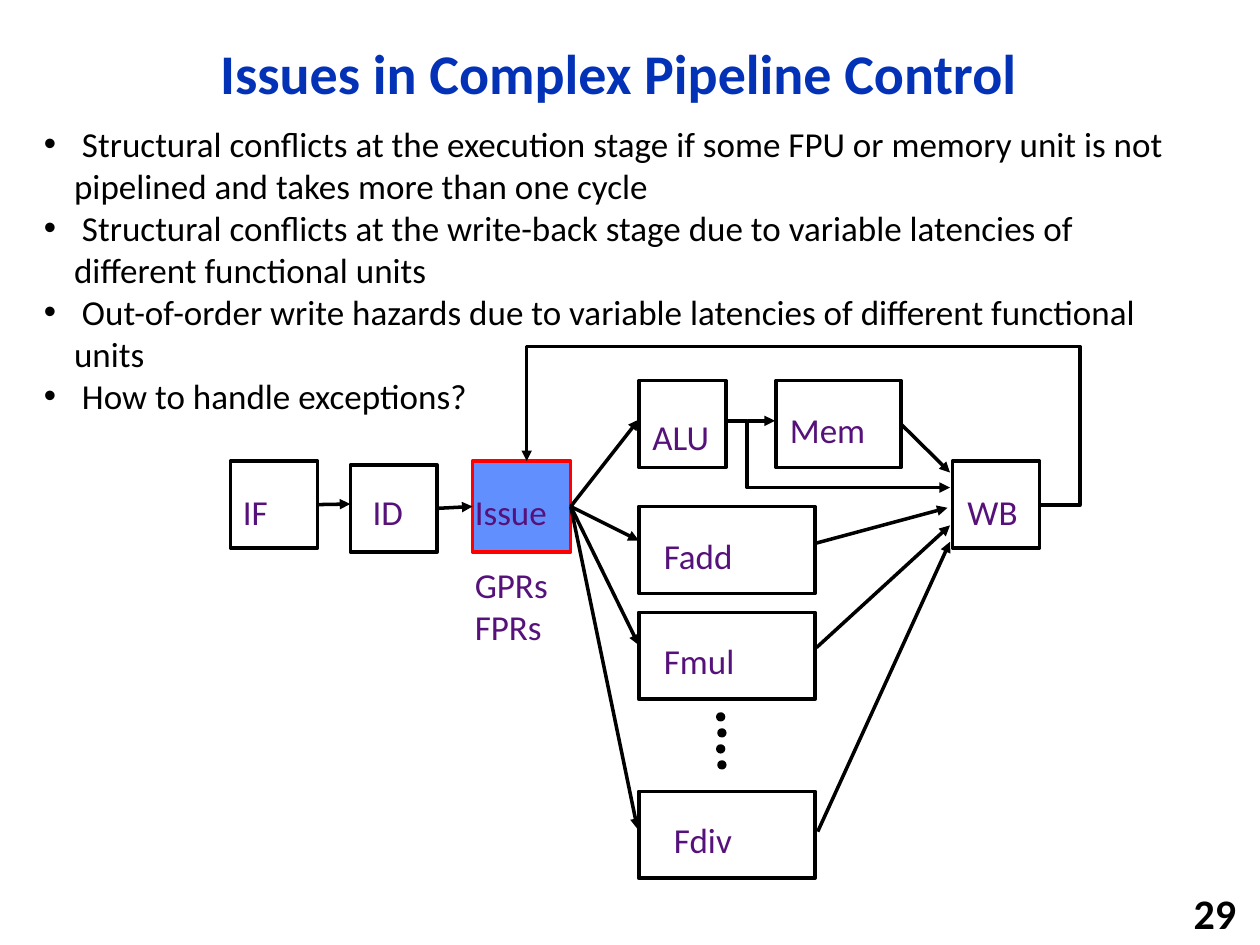
from lxml.etree import SubElement
from pptx import Presentation
from pptx.dml.color import RGBColor
from pptx.enum.shapes import MSO_CONNECTOR as Connector, MSO_SHAPE as Shape
from pptx.enum.text import MSO_ANCHOR as Anchor, PP_ALIGN as Align
from pptx.oxml.ns import qn
from pptx.util import Inches, Pt

COLORS = {"title": "0332B7", "ink": "000000", "label": "56127A",
          "issue": "618FFD", "alert": "FF0000"}
LEFT, RIGHT = 1, 3
BULLETS = [
    " Structural conflicts at the execution stage if some FPU or memory unit is not "
    "pipelined and takes more than one cycle",
    " Structural conflicts at the write-back stage due to variable latencies of "
    "different functional units",
    " Out-of-order write hazards due to variable latencies of different functional units",
    " How to handle exceptions?",
]
STAGES = {
    "IF": (0, 0.91, 0.69, 0, 0.18),
    "ID": (0.95, 0.94, 0.69, 0.08, 0.15),
    "Issue": (1.92, 0.91, 0.78, -0.08, 0.18),
    "WB": (5.73, 0.91, 0.69, 0.02, 0.18),
    "ALU": (3.24, 0.27, 0.69, 0.01, 0.23),
    "Mem": (4.33, 0.27, 0.99, 0.01, 0.17),
    "Fadd": (3.24, 1.27, 1.4, 0.1, 0.17),
    "Fmul": (3.24, 2.11, 1.4, 0.1, 0.17),
    "Fdiv": (3.24, 3.53, 1.4, 0.18, 0.17),
}
ARROWS = [
    ("IF", (0.7, 1.25), None, (0.95, 1.25)),
    ("ID", (1.66, 1.28), "Issue", (1.92, 1.28)),
    ("Issue", (2.7, 1.25), None, (3.24, 0.58)),
    ("Issue", (2.7, 1.25), None, (3.24, 1.54)),
    ("Issue", (2.7, 1.25), None, (3.24, 2.37)),
    ("Issue", (2.7, 1.25), None, (3.23, 3.83)),
    ("Mem", (5.33, 0.59), None, (5.71, 1.0)),
    (None, (4.65, 1.56), None, (5.69, 1.28)),
    (None, (4.65, 2.39), None, (5.71, 1.42)),
    (None, (4.66, 3.85), None, (5.71, 1.55)),
    (None, (4.11, 0.59), None, (4.32, 0.59)),
]
ROUTES = [
    [(3.94, 0.59), (4.1, 0.59), (4.1, 1.12), (5.71, 1.12)],
    [(6.43, 1.26), (6.74, 1.26), (6.74, 0), (2.35, 0), (2.35, 0.91)],
]


def color(name):
    """Return the named colour."""
    return RGBColor.from_string(COLORS[name])


def add_text(slide, box, lines, size, tint, bold=False, align=Align.LEFT, anchor=Anchor.TOP):
    """Write one paragraph per line in a text box and return its frame."""
    frame = slide.shapes.add_textbox(*map(Inches, box)).text_frame
    frame.word_wrap = True
    frame.vertical_anchor = anchor
    for index, line in enumerate(lines):
        para = frame.add_paragraph() if index else frame.paragraphs[0]
        para.alignment = align
        span = para.add_run()
        span.text = line
        span.font.name = "Calibri"
        span.font.size = Pt(size)
        span.font.bold = bold
        span.font.color.rgb = color(tint)
    return frame


def add_solid(slide, kind, box, fill=None, line="ink", width=2):
    """Add a preset shape with an outline and an optional fill."""
    shape = slide.shapes.add_shape(kind, *map(Inches, box))
    shape.shadow.inherit = False
    if fill:
        shape.fill.solid()
        shape.fill.fore_color.rgb = color(fill)
    else:
        shape.fill.background()
    shape.line.color.rgb = color(line)
    shape.line.width = Pt(width)
    return shape


def style_arrow(shape):
    """Give a line its colour, width and arrowhead, without a shadow."""
    shape.line.color.rgb = color("ink")
    shape.line.width = Pt(2)
    properties = shape._element.spPr
    SubElement(properties.find(qn("a:ln")), qn("a:tailEnd"), type="triangle")
    if properties.find(qn("a:effectLst")) is None:
        SubElement(properties, qn("a:effectLst"))


def add_bullets(slide, box):
    """List the control issues."""
    frame = add_text(slide, box, BULLETS, 20, "ink")
    for para in frame.paragraphs:
        properties = para._p.get_or_add_pPr()
        properties.set("marL", str(Inches(0.24)))
        properties.set("indent", str(-Inches(0.24)))
        SubElement(properties, qn("a:buFont"), typeface="Arial")
        SubElement(properties, qn("a:buChar"), char="•")


def add_pipeline(slide, left, top):
    """Draw the pipeline stages, functional units and their arrows."""
    def place(point):
        return Inches(left + point[0]), Inches(top + point[1])

    stages = {}
    for name, (x, y, width, shift, drop) in STAGES.items():
        issue = name == "Issue"
        stages[name] = add_solid(
            slide, Shape.RECTANGLE, (left + x, top + y, width, 0.72 if issue else 0.69),
            "issue" if issue else None, "alert" if issue else "ink")
        add_text(slide, (left + x + shift, top + y + drop, max(width, 0.93), 0.43),
                 [name], 20, "label")
    add_text(slide, (left + 1.84, top + 1.67, 0.96, 0.77), ["GPRs", "FPRs"], 20, "label")

    for index in range(4):
        add_solid(slide, Shape.OVAL,
                  (left + 3.86 + index % 2 * 0.01, top + 2.91 + index * 0.127, 0.06, 0.06),
                  "ink", width=1)

    for source, start, target, end in ARROWS:
        arrow = slide.shapes.add_connector(Connector.STRAIGHT, *place(start), *place(end))
        if source:
            arrow.begin_connect(stages[source], RIGHT)
        if target:
            arrow.end_connect(stages[target], LEFT)
        style_arrow(arrow)

    for start, *corners in ROUTES:
        builder = slide.shapes.build_freeform(*place(start))
        builder.add_line_segments([place(corner) for corner in corners], close=False)
        route = builder.convert_to_shape()
        route.fill.background()
        route.shadow.inherit = False
        style_arrow(route)


def main():
    """Build and save the deck."""
    deck = Presentation()
    deck.slide_width, deck.slide_height = Inches(10), Inches(7.5)
    slide = deck.slides.add_slide(deck.slide_layouts[6])
    add_text(slide, (0.92, 0.17, 7.98, 0.81), ["Issues in Complex Pipeline Control"],
             32, "title", True, Align.CENTER, Anchor.MIDDLE)
    add_text(slide, (7.83, 7.08, 2.08, 0.32), ["29"],
             24, "ink", True, Align.RIGHT, Anchor.MIDDLE)
    add_pipeline(slide, 1.83, 2.75)
    add_bullets(slide, (0.25, 0.92, 9.33, 2.45))
    deck.save("out.pptx")


if __name__ == "__main__":
    main()
